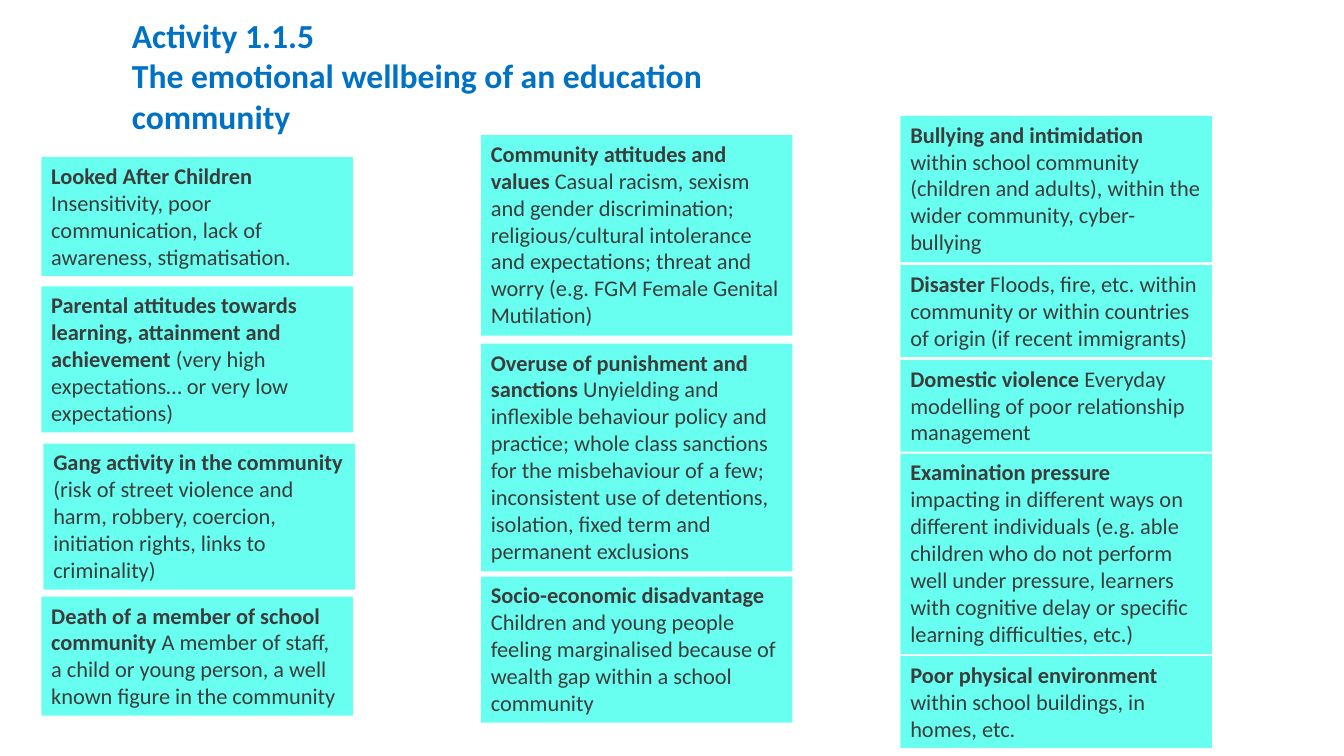
from dataclasses import dataclass

from pptx import Presentation
from pptx.dml.color import RGBColor
from pptx.enum.shapes import MSO_SHAPE
from pptx.enum.text import MSO_ANCHOR, MSO_AUTO_SIZE, PP_ALIGN
from pptx.shapes.autoshape import Shape
from pptx.slide import Slide
from pptx.text.text import TextFrame
from pptx.util import Inches, Pt

RECTANGLE = MSO_SHAPE.RECTANGLE
TOP = MSO_ANCHOR.TOP
GROW = MSO_AUTO_SIZE.SHAPE_TO_FIT_TEXT
LEFT = PP_ALIGN.LEFT


@dataclass(frozen=True)
class Theme:
    font: str = "Calibri"
    title_color: RGBColor = RGBColor(0x00, 0x72, 0xC6)
    text_color: RGBColor = RGBColor(0x3C, 0x3C, 0x3C)
    card_fill: RGBColor = RGBColor(0x68, 0xFF, 0xF0)
    title_size: int = 24
    card_size: int = 16


@dataclass(frozen=True)
class Card:
    left: float
    top: float
    lines: int
    heading: str
    detail: str


THEME = Theme()
CARD_WIDTH = 3.09
LINE_HEIGHT = 0.27
VERTICAL_MARGINS = 0.1
LEFT_COLUMN, MIDDLE_COLUMN, RIGHT_COLUMN = 0.41, 4.77, 8.93

TITLE = ["Activity 1.1.5", "The emotional wellbeing of an education community"]
CARDS = [
    Card(LEFT_COLUMN, 1.56, 4, "Looked After Children",
         "Insensitivity, poor communication, lack of awareness, stigmatisation."),
    Card(LEFT_COLUMN, 2.84, 5,
         "Parental attitudes towards learning, attainment and achievement",
         "(very high expectations… or very low expectations)"),
    Card(LEFT_COLUMN + 0.02, 4.4, 5, "Gang activity in the community",
         "(risk of street violence and harm, robbery, coercion, "
         "initiation rights, links to criminality)"),
    Card(LEFT_COLUMN, 5.92, 4, "Death of a member of school community",
         "A member of staff, a child or young person, "
         "a well known figure in the community"),
    Card(MIDDLE_COLUMN, 1.34, 7, "Community attitudes and values",
         "Casual racism, sexism and gender discrimination; religious/cultural "
         "intolerance and expectations; threat and worry "
         "(e.g. FGM Female Genital Mutilation)"),
    Card(MIDDLE_COLUMN, 3.41, 8, "Overuse of punishment and sanctions",
         "Unyielding and inflexible behaviour policy and practice; whole class "
         "sanctions for the misbehaviour of a few; inconsistent use of "
         "detentions, isolation, fixed term and permanent exclusions"),
    Card(MIDDLE_COLUMN, 5.72, 5, "Socio-economic disadvantage",
         "Children and young people feeling marginalised because of wealth gap "
         "within a school community"),
    Card(RIGHT_COLUMN, 1.15, 5, "Bullying and intimidation",
         "within school community (children and adults), "
         "within the wider community, cyber-bullying"),
    Card(RIGHT_COLUMN, 2.63, 3, "Disaster",
         "Floods, fire, etc. within community or within countries of origin "
         "(if recent immigrants)"),
    Card(RIGHT_COLUMN, 3.57, 3, "Domestic violence",
         "Everyday modelling of poor relationship management"),
    Card(RIGHT_COLUMN, 4.5, 7, "Examination pressure",
         "impacting in different ways on different individuals (e.g. able "
         "children who do not perform well under pressure, learners with "
         "cognitive delay or specific learning difficulties, etc.)"),
    Card(RIGHT_COLUMN, 6.51, 3, "Poor physical environment",
         "within school buildings, in homes, etc."),
]


def write_text(frame: TextFrame, paragraphs: list[list[tuple[str, bool]]], *,
               size: int, color: RGBColor) -> None:
    """Fill the frame; each paragraph is a list of (text, bold) runs."""
    frame.word_wrap = True
    frame.auto_size = GROW
    frame.vertical_anchor = TOP
    for index, runs in enumerate(paragraphs):
        paragraph = frame.add_paragraph() if index else frame.paragraphs[0]
        paragraph.alignment = LEFT
        for text, bold in runs:
            run = paragraph.add_run()
            run.text = text
            run.font.name = THEME.font
            run.font.size = Pt(size)
            run.font.bold = bold
            run.font.color.rgb = color


def add_card(slide: Slide, card: Card) -> Shape:
    height = VERTICAL_MARGINS + LINE_HEIGHT * card.lines
    shape = slide.shapes.add_shape(RECTANGLE, Inches(card.left), Inches(card.top),
                                   Inches(CARD_WIDTH), Inches(height))
    shape.shadow.inherit = False
    shape.fill.solid()
    shape.fill.fore_color.rgb = THEME.card_fill
    shape.line.fill.background()
    write_text(shape.text_frame, [[(card.heading + " ", True), (card.detail, False)]],
               size=THEME.card_size, color=THEME.text_color)
    return shape


def add_title(slide: Slide) -> Shape:
    title = slide.shapes.add_textbox(Inches(1.21), Inches(0.1),
                                     Inches(7.26), Inches(1.31))
    write_text(title.text_frame, [[(line, True)] for line in TITLE],
               size=THEME.title_size, color=THEME.title_color)
    return title


def main() -> None:
    presentation = Presentation()
    presentation.slide_width = Inches(13.33)
    presentation.slide_height = Inches(7.5)
    slide = presentation.slides.add_slide(presentation.slide_layouts[6])
    for card in CARDS:
        add_card(slide, card)
    add_title(slide)
    presentation.save("out.pptx")


if __name__ == "__main__":
    main()
